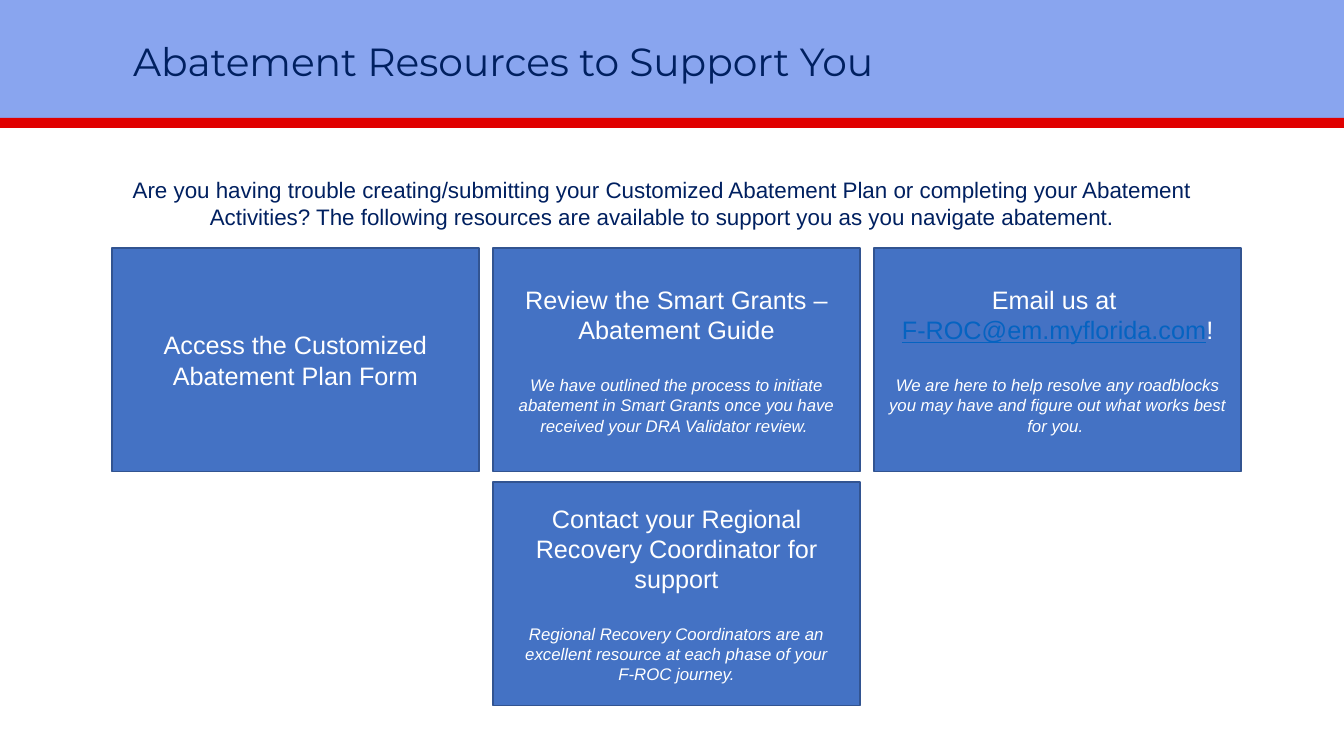
from pptx import Presentation
from pptx import util as u
from pptx.dml.color import RGBColor
from pptx.enum import shapes, text

NAVY = RGBColor(0x00, 0x20, 0x60)
WHITE = RGBColor(0xFF, 0xFF, 0xFF)
BAND_BLUE = RGBColor(0x89, 0xA5, 0xEF)
STRIPE_RED = RGBColor(0xE0, 0x00, 0x00)
CARD_BLUE = RGBColor(0x44, 0x72, 0xC4)
CARD_EDGE = RGBColor(0x32, 0x54, 0x91)
LINK_BLUE = RGBColor(0x05, 0x63, 0xC1)

WIDTH, HEIGHT = 13.33, 7.5
CARD_W, CARD_H = 3.64, 2.22
CARD_LEFT, CARD_TOP = 1.11, 2.46
COL_STEP, ROW_STEP = 3.78, 2.32

prs = Presentation()
prs.slide_width, prs.slide_height = u.Inches(WIDTH), u.Inches(HEIGHT)
slide = prs.slides.add_slide(prs.slide_layouts[5])


def add_block(left, top, width, height, fill, edge=None):
    """Add a flat rectangle, placed in inches, with an optional outline."""
    block = slide.shapes.add_shape(
        shapes.MSO_SHAPE.RECTANGLE, *map(u.Inches, (left, top, width, height)))
    block.shadow.inherit = False
    block.fill.solid()
    block.fill.fore_color.rgb = fill
    if edge is None:
        block.line.fill.background()
    else:
        block.line.color.rgb = edge
        block.line.width = u.Pt(1)
    return block


def write(paragraph, words, size=18, color=WHITE, font="Arial", italic=False,
          underline=False, align=text.PP_ALIGN.CENTER):
    """Append formatted text to the paragraph; a newline breaks the line."""
    paragraph.alignment = align
    for number, line in enumerate(words.split("\n")):
        if number:
            paragraph.add_line_break()
        run = paragraph.add_run()
        run.text = line
        run.font.size = u.Pt(size)
        run.font.name = font
        run.font.color.rgb = color
        run.font.italic = italic
        run.font.underline = underline


# Header band and title
add_block(0, 0, WIDTH, 1.18, BAND_BLUE)
add_block(0, 1.17, WIDTH, 0.1, STRIPE_RED)

title = slide.shapes.title
slide.shapes._spTree.append(title._element)  # bring in front of the band
title.left, title.top, title.width, title.height = map(
    u.Inches, (1.22, 0.32, 10.17, 0.57))
title.text_frame.vertical_anchor = text.MSO_ANCHOR.TOP
title.text_frame.auto_size = text.MSO_AUTO_SIZE.NONE
write(title.text_frame.paragraphs[0], "Abatement Resources to Support You",
      size=28, color=NAVY, font="Montserrat", align=text.PP_ALIGN.LEFT)

# Resource cards: column, row, heading lines made of (words, format), note
cards = [
    (0, 0, [[("Access the Customized Abatement Plan Form", {})]], None),
    (1, 0, [[("Review the Smart Grants – Abatement Guide", {})]],
     "We have outlined the process to initiate abatement in Smart Grants "
     "once you have received your DRA Validator review. "),
    (1, 1, [[("Contact your Regional Recovery Coordinator for support", {})]],
     "Regional Recovery Coordinators are an excellent resource at each phase "
     "of your\nF-ROC journey."),
    (2, 0, [[("Email us at ", {})],
            [("F-ROC@em.myflorida.com",
              {"color": LINK_BLUE, "underline": True}), ("!", {})]],
     "We are here to help resolve any roadblocks you may have and figure out "
     "what works best for you. "),
]
for column, row, heading, note in cards:
    card = add_block(CARD_LEFT + column * COL_STEP, CARD_TOP + row * ROW_STEP,
                     CARD_W, CARD_H, CARD_BLUE, CARD_EDGE)
    frame = card.text_frame
    frame.word_wrap = True
    frame.vertical_anchor = text.MSO_ANCHOR.MIDDLE
    for number, line in enumerate(heading):
        paragraph = frame.add_paragraph() if number else frame.paragraphs[0]
        for words, style in line:
            write(paragraph, words, **style)
    if note:
        paragraph = frame.add_paragraph()
        paragraph.space_before = u.Pt(21.5)
        write(paragraph, note, size=12, italic=True)

# Introduction
intro = slide.shapes.add_textbox(*map(u.Inches, (1.08, 1.7, 10.97, 0.64)))
intro.text_frame.word_wrap = True
write(intro.text_frame.paragraphs[0],
      "Are you having trouble creating/submitting your Customized Abatement "
      "Plan or completing your Abatement Activities? The following resources "
      "are available to support you as you navigate abatement.",
      size=16, color=NAVY)

prs.save("out.pptx")
